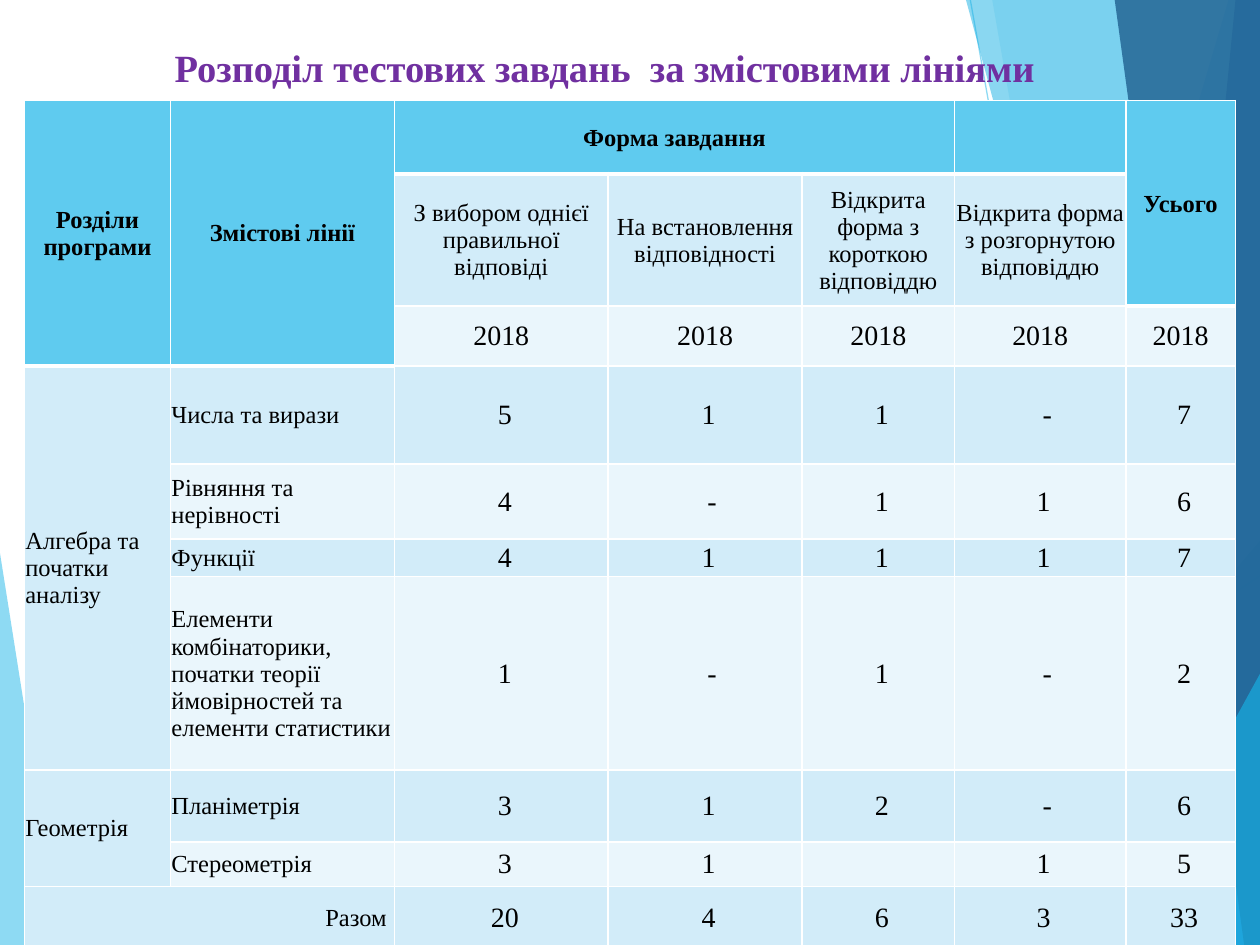
from typing import NamedTuple

from lxml import etree
from pptx import Presentation, util as u
from pptx.dml.color import RGBColor
from pptx.enum import shapes, text
from pptx.oxml import ns

Pt = u.Pt
SKY = RGBColor(0x5F, 0xCB, 0xEF)
CYAN = RGBColor(0x17, 0xB0, 0xE4)
BLUE = RGBColor(0x2E, 0x83, 0xC3)
NAVY = RGBColor(0x22, 0x62, 0x92)
DARK = RGBColor(0xD2, 0xEC, 0xF9)
LIGHT = RGBColor(0xEA, 0xF6, 0xFC)
PURPLE = RGBColor(0x70, 0x30, 0xA0)
BLACK = RGBColor(0, 0, 0)
WHITE = RGBColor(255, 255, 255)
FACE = "Times New Roman"
WIDE, HIGH = 720, 540


class Facet(NamedTuple):
    color: RGBColor
    alpha: int
    points: list


class Ray(NamedTuple):
    start: tuple
    end: tuple


class Span(NamedTuple):
    top: int
    left: int
    bottom: int
    right: int


RAYS = [Ray((404, HIGH), (WIDE, 329)), Ray((554.5, 0), (651, HIGH))]
EDGE = [(WIDE, HIGH), (WIDE, 0)]
LEFT = Facet(SKY, 70, [(0, 316), (35.5, HIGH), (0, HIGH)])
RIGHT = [
    Facet(SKY, 36, [(702, 0), (543, HIGH), *EDGE]),
    Facet(SKY, 20, [(567, 0), (661.5, HIGH), *EDGE]),
    Facet(CYAN, 66, [(523, HIGH), (WIDE, 309), (WIDE, HIGH)]),
    Facet(CYAN, 50, [(552, 0), (698.5, HIGH), *EDGE]),
    Facet(BLUE, 70, [(706, 0), (653, HIGH), *EDGE]),
    Facet(NAVY, 82, [(637, 0), (711, HIGH), *EDGE]),
    Facet(CYAN, 66, [(635, HIGH), (WIDE, 385), (WIDE, HIGH)]),
]

COLS = [83.5, 128, 122, 111, 87, 98, 62.5]
ROWS = [42, 75.5, 31.5, 56, 43, 21.5, 110.5, 41, 25.5, 36]
SPANS = [
    Span(0, 0, 2, 0), Span(0, 1, 2, 1), Span(0, 2, 0, 4), Span(0, 6, 1, 6),
    Span(3, 0, 6, 0), Span(7, 0, 8, 0), Span(9, 0, 9, 1),
]
CELLS = [
    ["Розділи програми", "Змістові лінії", "Форма завдання", "", "", "", "Усього"],
    ["", "", "З вибором однієї правильної відповіді",
     "На встановлення відповідності", "Відкрита форма з короткою відповіддю",
     "Відкрита форма з розгорнутою відповіддю", ""],
    ["", "", *["2018"] * 5],
    ["Алгебра та початки аналізу", "Числа та вирази", "5", "1", "1", " -", "7"],
    ["", "Рівняння та нерівності", "4", " -", "1", "1", "6"],
    ["", "Функції", "4", "1", "1", "1", "7"],
    ["", "Елементи комбінаторики, початки теорії ймовірностей та елементи "
     "статистики", "1", " -", "1", " -", "2"],
    ["Геометрія", "Планіметрія", "3", "1", "2", " -", "6"],
    ["", "Стереометрія", "3", "1", "", "1", "5"],
    ["Разом", "", "20", "4", "6", "3", "33"],
]


def fade(fill, alpha: int) -> None:
    """Set the opacity, in percent, of a solid colour."""
    color = fill.find(".//" + ns.qn("a:srgbClr"))
    etree.SubElement(color, ns.qn("a:alpha"), val=str(alpha * 1000))


def draw_facet(slide, facet: Facet) -> None:
    spots = [(Pt(x), Pt(y)) for x, y in facet.points]
    pen = slide.shapes.build_freeform(*spots[0], scale=1.0)
    pen.add_line_segments(spots[1:], close=True)
    shape = pen.convert_to_shape()
    shape.shadow.inherit = False
    shape.fill.solid()
    shape.fill.fore_color.rgb = facet.color
    fade(shape.element.spPr.find(ns.qn("a:solidFill")), facet.alpha)
    shape.line.fill.background()


def draw_ray(slide, ray: Ray) -> None:
    ends = [Pt(n) for n in (*ray.start, *ray.end)]
    line = slide.shapes.add_connector(shapes.MSO_CONNECTOR.STRAIGHT, *ends)
    line.line.color.rgb = SKY
    line.line.width = Pt(0.75)
    props = line.element.spPr
    fade(props.find(ns.qn("a:ln")), 70)
    etree.SubElement(props, ns.qn("a:effectLst"))


def set_font(para, size: float, color: RGBColor, bold: bool) -> None:
    font = para.font
    font.name, font.size, font.bold = FACE, Pt(size), bold
    font.color.rgb = color


def draw_title(slide, words: str) -> None:
    box = slide.shapes.add_textbox(0, Pt(21.5), Pt(691), Pt(36))
    frame = box.text_frame
    frame.word_wrap = True
    para = frame.paragraphs[0]
    para.text = words
    para.alignment = text.PP_ALIGN.CENTER
    set_font(para, 22, PURPLE, True)


def add_rules(cell, head: bool) -> None:
    """White cell borders, thick below the header."""
    props = cell._tc.get_or_add_tcPr()
    sides = {"lnL": 1, "lnR": 1, "lnT": 1, "lnB": 3} if head else {
        "lnL": 1, "lnR": 1, "lnB": 1}
    for spot, (side, width) in enumerate(sides.items()):
        rule = etree.Element(ns.qn("a:" + side), w=str(Pt(width)))
        fill = etree.SubElement(rule, ns.qn("a:solidFill"))
        etree.SubElement(fill, ns.qn("a:srgbClr"), val=str(WHITE))
        props.insert(spot, rule)


def fill_cell(cell, row: int, col: int, words: str) -> None:
    head, label, body = row == 0, col < 2, row > 2
    cell.fill.solid()
    cell.fill.fore_color.rgb = SKY if head else DARK if row % 2 else LIGHT
    cell.vertical_anchor = text.MSO_ANCHOR.MIDDLE
    cell.margin_left = Pt(4.5 if body and not label else 0.5)
    cell.margin_right = Pt(4.5 if row == 9 and label else 0.5)
    cell.margin_top, cell.margin_bottom = Pt(0.5), 0
    para = cell.text_frame.paragraphs[0]
    para.text = words
    align = text.PP_ALIGN
    para.alignment = (align.CENTER if not (body and label)
                      else align.RIGHT if row == 9 else align.LEFT)
    set_font(para, 14 if label or row < 2 else 16, BLACK, head)
    if not cell.is_spanned:
        add_rules(cell, head)


def draw_table(slide) -> None:
    frame = slide.shapes.add_table(
        len(ROWS), len(COLS), Pt(14), Pt(57.5), Pt(sum(COLS)), Pt(sum(ROWS)))
    table = frame.table
    table.first_row = table.horz_banding = False
    for col, width in zip(table.columns, COLS):
        col.width = Pt(width)
    for row, height in zip(table.rows, ROWS):
        row.height = Pt(height)
    for span in SPANS:
        table.cell(span.top, span.left).merge(table.cell(span.bottom, span.right))
    for row, line in enumerate(CELLS):
        for col, words in enumerate(line):
            fill_cell(table.cell(row, col), row, col, words)


def main() -> None:
    deck = Presentation()
    deck.slide_width, deck.slide_height = Pt(WIDE), Pt(HIGH)
    slide = deck.slides.add_slide(deck.slide_layouts[6])
    # Backdrop
    draw_facet(slide, LEFT)
    for ray in RAYS:
        draw_ray(slide, ray)
    for facet in RIGHT:
        draw_facet(slide, facet)
    # Content
    draw_title(slide, "Розподіл тестових завдань  за змістовими лініями")
    draw_table(slide)
    deck.save("out.pptx")


if __name__ == "__main__":
    main()
